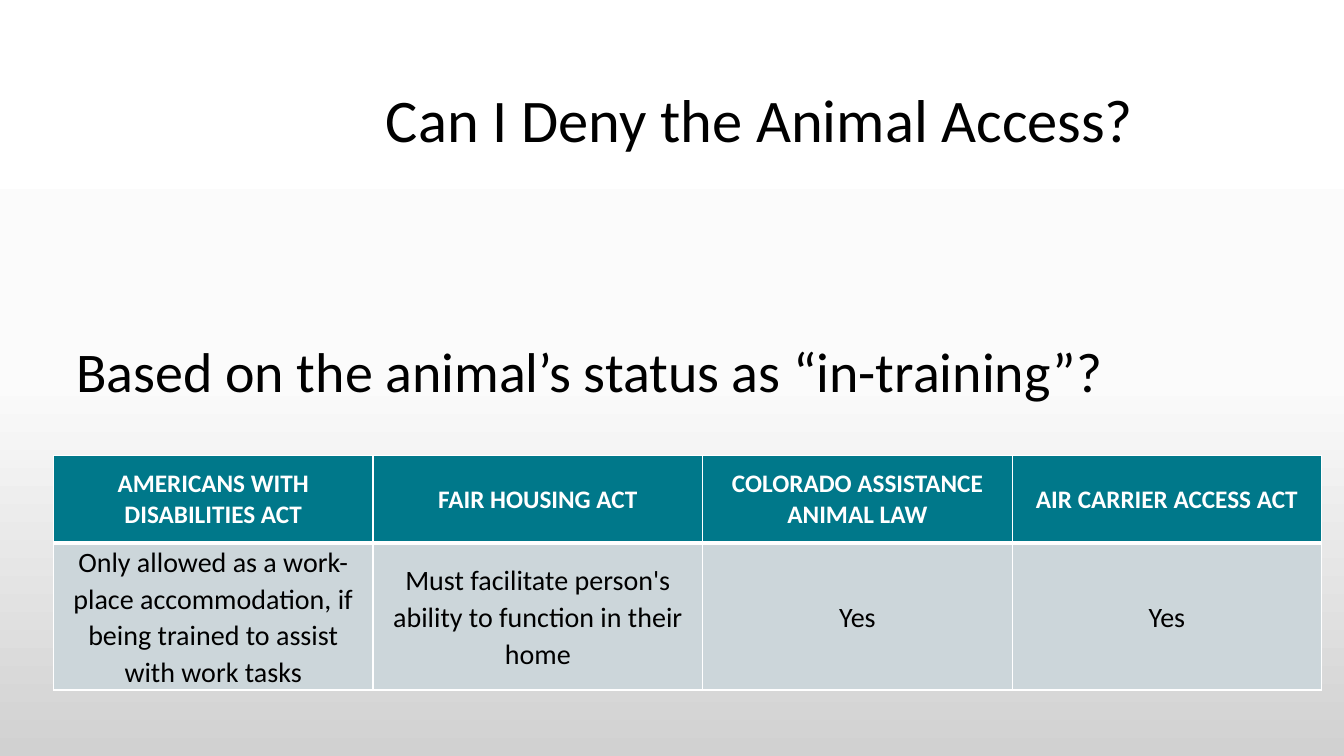
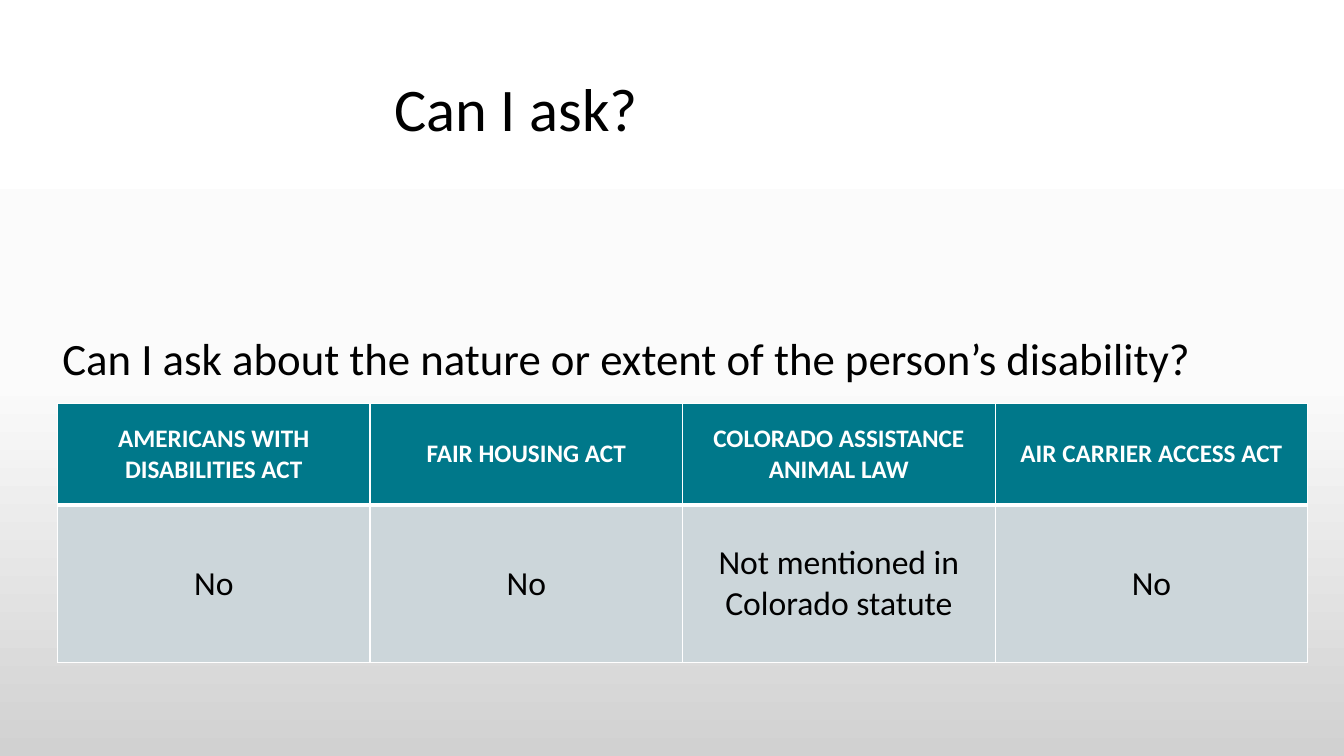
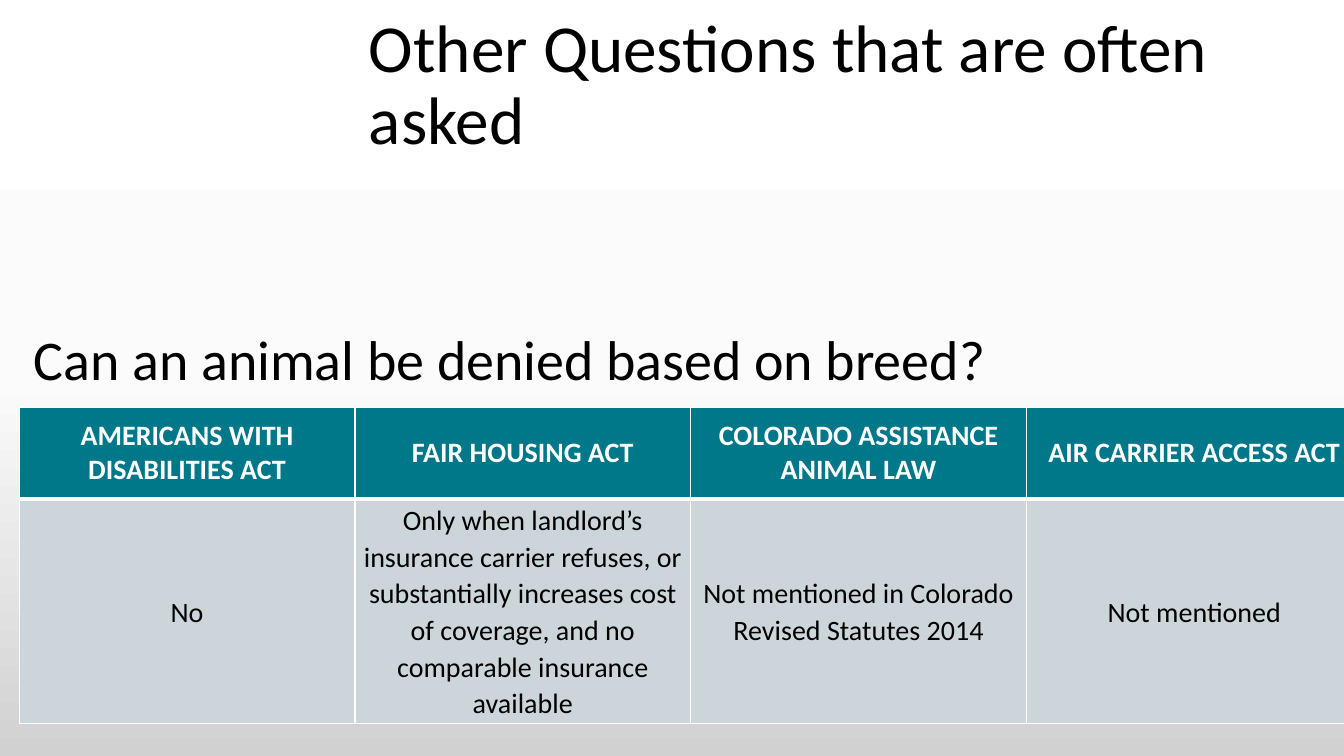
"""Build three slides comparing animal access rules under four laws."""
import copy

import pptx
import pptx.dml.color
import pptx.enum.text
import pptx.oxml
import pptx.oxml.ns
import pptx.util

Inches, Pt = pptx.util.Inches, pptx.util.Pt
RGBColor = pptx.dml.color.RGBColor
ANCHOR, ALIGN = pptx.enum.text.MSO_ANCHOR, pptx.enum.text.PP_ALIGN
AUTO_SIZE = pptx.enum.text.MSO_AUTO_SIZE

WHITE, BLACK = RGBColor(0xFF, 0xFF, 0xFF), RGBColor(0, 0, 0)
TEAL, MIST = RGBColor(0x00, 0x78, 0x8A), RGBColor(0xCC, 0xD6, 0xDA)
BACKDROP = [(0, WHITE), (0.5, RGBColor(0xFB, 0xFB, 0xFB)), (1, RGBColor(0xD1, 0xD1, 0xD1))]
FONT = "Calibri"
TITLE_SIZE = (8.82, 0.64)
THIN, THICK = 1, 3

LAWS = ["AMERICANS WITH DISABILITIES ACT", "FAIR HOUSING ACT",
        "COLORADO ASSISTANCE ANIMAL LAW", "AIR CARRIER ACCESS ACT"]
TIGHT = {"margin_left": Inches(0.07), "margin_right": Inches(0.07),
         "margin_top": 0, "margin_bottom": 0}

SLIDES = [
    {"title": "Can I Deny the Animal Access?", "title_at": (3.73, 0.9), "title_pt": 43.2,
     "question": "Based on the animal’s status as “in-training”?",
     "question_box": (0.66, 3.24, 10.48, 0.82), "question_pt": 40,
     "wrap": False, "align": ALIGN.LEFT, "spacing": 1.07,
     "answers": ["Only allowed as a work-place accommodation, if being trained to assist with work tasks",
                 "Must facilitate person's ability to function in their home", "Yes", "Yes"],
     "table_at": (0.53, 4.52), "cols": [3.17, 3.27, 3.07, 3.07], "rows": [0.87, 1.36],
     "header_pt": 18, "answer_pt": 20, "margins": TIGHT},
    {"title": "Can I ask?", "title_at": (3.81, 0.79), "title_pt": 43.2,
     "question": "Can I ask about the nature or extent of the person’s disability?",
     "question_box": (0.52, 3.23, 12.53, 0.64), "question_pt": 32,
     "wrap": True, "align": ALIGN.LEFT, "spacing": 1.0,
     "answers": ["No", "No", "Not mentioned in Colorado statute", "No"],
     "table_at": (0.57, 4), "cols": [3.1] * 4, "rows": [1.01, 1.56],
     "header_pt": 18, "answer_pt": 24, "margins": {}},
    {"title": "Other Questions that are often asked", "title_at": (3.56, 0.54), "title_pt": 48,
     "question": "Can an animal be denied based on breed?",
     "question_box": (0.19, 3.12, 9.73, 0.79), "question_pt": 40,
     "wrap": False, "align": ALIGN.CENTER, "spacing": 1.07,
     "answers": ["No",
                 "Only when landlord’s insurance carrier refuses, or substantially increases "
                 "cost of coverage, and no comparable insurance available",
                 "Not mentioned in Colorado Revised Statutes 2014", "Not mentioned"],
     "table_at": (0.19, 4.04), "cols": [3.33] * 4, "rows": [0.91, 2.23],
     "header_pt": 20, "answer_pt": 20, "margins": TIGHT},
]


def set_backdrop(master):
    fill = master.background.fill
    fill.gradient()
    fill.gradient_angle = 270
    stops = master.element.find(".//" + pptx.oxml.ns.qn("a:gsLst"))
    stops.append(copy.deepcopy(stops[-1]))
    for stop, (position, color) in zip(fill.gradient_stops, BACKDROP):
        stop.color.rgb = color
        stop.position = position


def write(tf, text, size, color=BLACK, bold=False, align=ALIGN.LEFT, spacing=1.0):
    p = tf.paragraphs[0]
    p.alignment, p.line_spacing = align, spacing
    r = p.add_run()
    r.text = text
    for name, value in {"name": FONT, "size": Pt(size), "bold": bold}.items():
        setattr(r.font, name, value)
    r.font.color.rgb = color


def add_text(s, box, text, size, anchor=ANCHOR.TOP, wrap=True, grow=False, **style):
    tf = s.shapes.add_textbox(*map(Inches, box)).text_frame
    tf.word_wrap, tf.vertical_anchor = wrap, anchor
    tf.auto_size = AUTO_SIZE.SHAPE_TO_FIT_TEXT if grow else AUTO_SIZE.NONE
    write(tf, text, size, **style)


def add_borders(cell, **widths):
    tcPr = cell._tc.get_or_add_tcPr()
    for side in "LRTB":
        tcPr.append(pptx.oxml.parse_xml(
            f'<a:ln{side} {pptx.oxml.ns.nsdecls("a")} w="{Pt(widths.get(side, THIN))}">'
            f'<a:solidFill><a:srgbClr val="{WHITE}"/></a:solidFill></a:ln{side}>'))


def add_cell(cell, text, size, fill, margins, borders, **style):
    add_borders(cell, **borders)
    cell.fill.solid()
    cell.fill.fore_color.rgb = fill
    cell.vertical_anchor = ANCHOR.MIDDLE
    for name, value in margins.items():
        setattr(cell, name, value)
    write(cell.text_frame, text, size, align=ALIGN.CENTER, **style)


def add_law_table(s, d):
    cols, rows = d["cols"], d["rows"]
    box = (*d["table_at"], sum(cols), sum(rows))
    table = s.shapes.add_table(len(rows), len(cols), *map(Inches, box)).table
    for row, height in zip(table.rows, rows):
        row.height = Inches(height)
    for i, (width, law, answer) in enumerate(zip(cols, LAWS, d["answers"])):
        table.columns[i].width = Inches(width)
        add_cell(table.cell(0, i), law, d["header_pt"], TEAL, {}, {"B": THICK},
                 color=WHITE, bold=True)
        add_cell(table.cell(1, i), answer, d["answer_pt"], MIST, d["margins"], {"T": THICK},
                 spacing=d["spacing"])


def main():
    prs = pptx.Presentation()
    prs.slide_width, prs.slide_height = Inches(13.33), Inches(7.5)
    set_backdrop(prs.slide_master)
    for d in SLIDES:
        s = prs.slides.add_slide(prs.slide_layouts[6])
        add_law_table(s, d)
        add_text(s, (*d["title_at"], *TITLE_SIZE), d["title"], d["title_pt"],
                 anchor=ANCHOR.MIDDLE, spacing=0.9)
        add_text(s, d["question_box"], d["question"], d["question_pt"], wrap=d["wrap"],
                 grow=True, align=d["align"], spacing=d["spacing"])
    prs.save("out.pptx")


if __name__ == "__main__":
    main()
